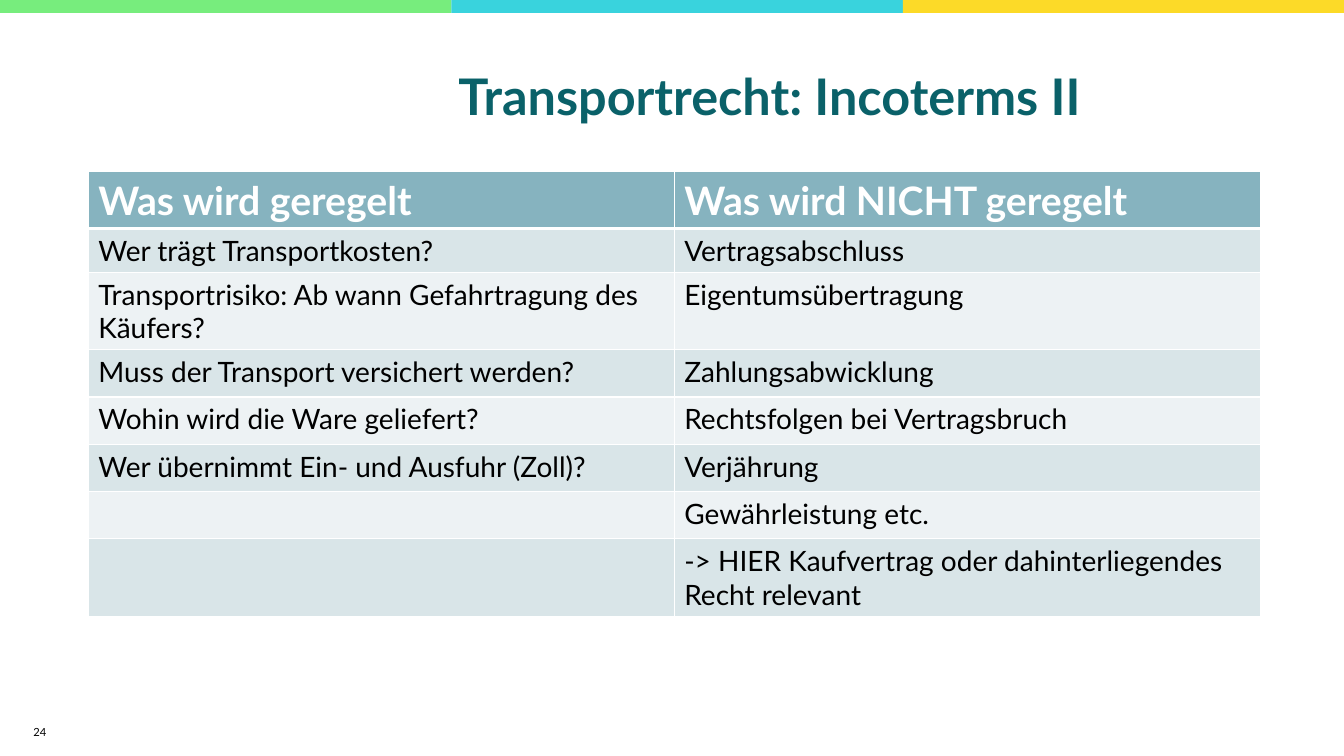
from dataclasses import dataclass

from lxml import etree
from pptx import Presentation
from pptx.dml.color import RGBColor
from pptx.enum.shapes import MSO_SHAPE
from pptx.enum.text import MSO_ANCHOR, PP_ALIGN
from pptx.oxml.ns import qn
from pptx.slide import Slide
from pptx.table import _Cell as Cell
from pptx.text.text import _Paragraph as Paragraph
from pptx.util import Pt

FONT = "Lato"
WHITE = RGBColor(0xFF, 0xFF, 0xFF)
BLACK = RGBColor(0x00, 0x00, 0x00)
GREEN = RGBColor(0x77, 0xED, 0x7D)
CYAN = RGBColor(0x39, 0xD3, 0xDD)
YELLOW = RGBColor(0xFC, 0xDA, 0x28)
TEAL = RGBColor(0x0A, 0x61, 0x69)
HEADER = RGBColor(0x86, 0xB3, 0xBF)
BAND_DARK = RGBColor(0xD9, 0xE5, 0xE8)
BAND_LIGHT = RGBColor(0xED, 0xF2, 0xF4)


@dataclass
class Bar:
    left: float
    top: float
    width: float
    height: float
    color: RGBColor


@dataclass
class Label:
    text: str
    left: float
    top: float
    width: float
    height: float
    size: float
    color: RGBColor
    bold: bool = False
    align: PP_ALIGN = PP_ALIGN.LEFT
    spacing: float = 1.0


@dataclass
class Row:
    regulated: str
    unregulated: str
    height: float


BARS = [
    Bar(0, -0.72, 322.5, 10, GREEN),
    Bar(322.5, -0.72, 322.5, 10, CYAN),
    Bar(645, 0, 315, 9.3, YELLOW),
]
LABELS = [
    Label("24", 5, 508.3, 35.3, 28.8, 8, BLACK, align=PP_ALIGN.RIGHT),
    Label("Transportrecht: Incoterms II", 320.4, 27.4, 606.2, 86.4, 36, TEAL,
          bold=True, spacing=0.9),
]
ROWS = [
    Row("Was wird geregelt", "Was wird NICHT geregelt", 36.8),
    Row("Wer trägt Transportkosten?", "Vertragsabschluss", 28.4),
    Row("Transportrisiko: Ab wann Gefahrtragung des Käufers?",
        "Eigentumsübertragung", 49.7),
    Row("Muss der Transport versichert werden?", "Zahlungsabwicklung", 33.8),
    Row("Wohin wird die Ware geliefert?", "Rechtsfolgen bei Vertragsbruch", 33.8),
    Row("Wer übernimmt Ein- und Ausfuhr (Zoll)?", "Verjährung", 33.8),
    Row("", "Gewährleistung etc.", 33.8),
    Row("", "-> HIER Kaufvertrag oder dahinterliegendes Recht relevant", 49.7),
]
TABLE_LEFT, TABLE_TOP, COLUMN_WIDTH = 63, 122.4, 418.6


def set_font(p: Paragraph, size: float, color: RGBColor, bold: bool) -> None:
    p.font.name = FONT
    p.font.size = Pt(size)
    p.font.bold = bold
    p.font.color.rgb = color


def add_bar(s: Slide, bar: Bar) -> None:
    sp = s.shapes.add_shape(MSO_SHAPE.RECTANGLE, Pt(bar.left), Pt(bar.top),
                            Pt(bar.width), Pt(bar.height))
    sp.shadow.inherit = False
    sp.fill.solid()
    sp.fill.fore_color.rgb = bar.color
    sp.line.fill.background()


def add_label(s: Slide, label: Label) -> None:
    sp = s.shapes.add_textbox(Pt(label.left), Pt(label.top),
                              Pt(label.width), Pt(label.height))
    tf = sp.text_frame
    tf.word_wrap = True
    tf.vertical_anchor = MSO_ANCHOR.MIDDLE
    p = tf.paragraphs[0]
    p.text = label.text
    p.alignment = label.align
    p.line_spacing = label.spacing
    set_font(p, label.size, label.color, label.bold)


def set_borders(cell: Cell, top: float, bottom: float) -> None:
    tc_pr = cell._tc.get_or_add_tcPr()
    for tag, width in (("lnL", 1), ("lnR", 1), ("lnT", top), ("lnB", bottom)):
        ln = etree.SubElement(tc_pr, qn(f"a:{tag}"), w=str(Pt(width)))
        fill = etree.SubElement(ln, qn("a:solidFill"))
        etree.SubElement(fill, qn("a:srgbClr"), val=str(WHITE))


def fill_cell(cell: Cell, text: str, row: int) -> None:
    is_header = row == 0
    set_borders(cell, 3 if row == 1 else 1, 3 if is_header else 1)
    cell.fill.solid()
    band = BAND_DARK if row % 2 else BAND_LIGHT
    cell.fill.fore_color.rgb = HEADER if is_header else band
    p = cell.text_frame.paragraphs[0]
    p.text = text
    set_font(p, 28 if is_header else 20, WHITE if is_header else BLACK, is_header)


def add_rules_table(s: Slide, rows: list[Row]) -> None:
    frame = s.shapes.add_table(len(rows), 2, Pt(TABLE_LEFT), Pt(TABLE_TOP),
                               Pt(2 * COLUMN_WIDTH),
                               Pt(sum(row.height for row in rows)))
    table = frame.table
    for column in table.columns:
        column.width = Pt(COLUMN_WIDTH)
    for i, row in enumerate(rows):
        table.rows[i].height = Pt(row.height)
        for j, text in enumerate((row.regulated, row.unregulated)):
            fill_cell(table.cell(i, j), text, i)


def main() -> None:
    prs = Presentation()
    prs.slide_width, prs.slide_height = Pt(960), Pt(540)
    s = prs.slides.add_slide(prs.slide_layouts[6])
    for bar in BARS:
        add_bar(s, bar)
    for label in LABELS:
        add_label(s, label)
    add_rules_table(s, ROWS)
    prs.save("out.pptx")


if __name__ == "__main__":
    main()
